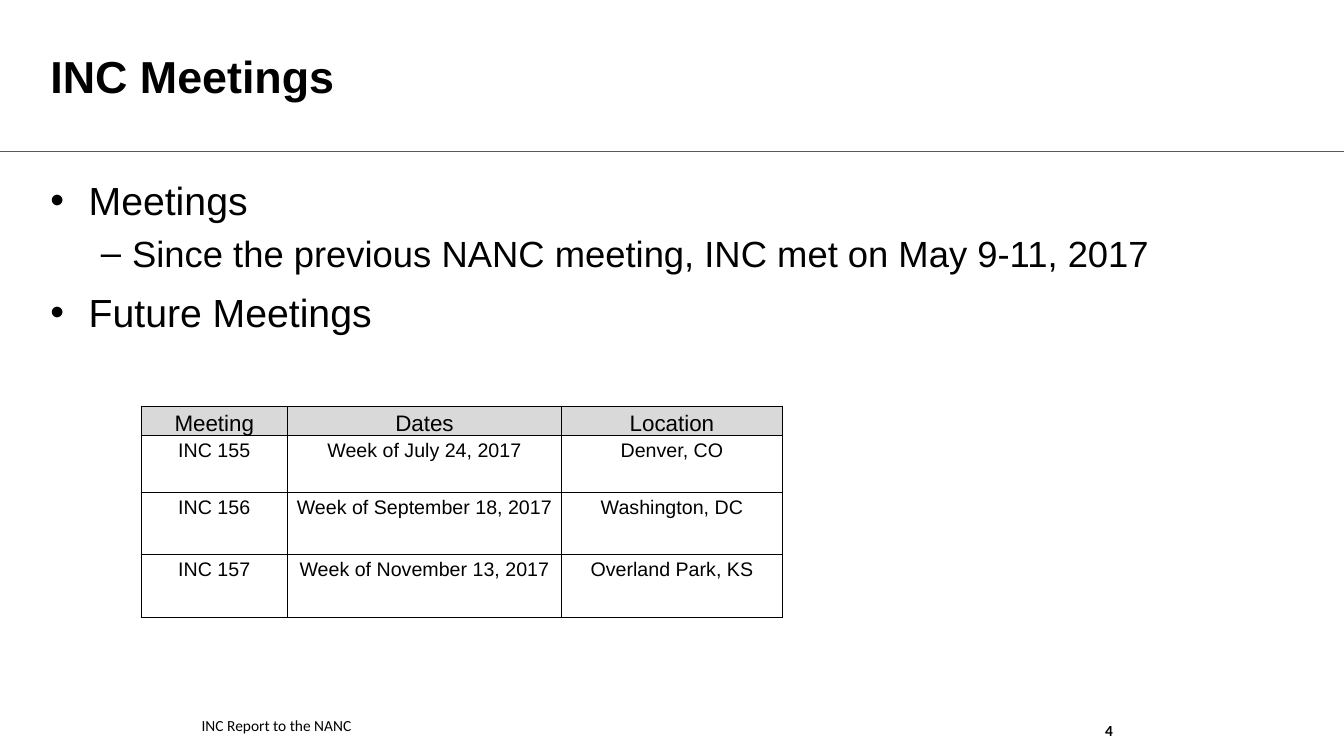
from lxml.etree import SubElement
from pptx import Presentation
from pptx.dml.color import RGBColor
from pptx.enum.shapes import MSO_CONNECTOR
from pptx.enum.text import MSO_ANCHOR, MSO_AUTO_SIZE, PP_ALIGN
from pptx.oxml.ns import qn
from pptx.util import Inches, Pt

BLACK = RGBColor(0x00, 0x00, 0x00)
RULE_GREY = RGBColor(0x59, 0x59, 0x59)
HEADER_GREY = RGBColor(0xD9, 0xD9, 0xD9)

WIDTH, HEIGHT = Inches(13.33), Inches(7.5)
MARGIN = Inches(0.5)
CONTENT_WIDTH = WIDTH - 2 * MARGIN
FOOTER_TOP, FOOTER_HEIGHT = Inches(7.1), Inches(0.3)

# Per level: bullet, left indent, hanging indent (inches), text size, space before
LEVELS = [("•", 0.38, 0.38, 28, 10.3), ("–", 0.81, 0.31, 26, 5.2)]
AGENDA = [
    (0, "Meetings"),
    (1, "Since the previous NANC meeting, INC met on May 9-11, 2017"),
    (0, "Future Meetings"),
]

MEETINGS = [
    ("Meeting", "Dates", "Location"),
    ("INC 155", "Week of July 24, 2017", "Denver, CO"),
    ("INC 156", "Week of September 18, 2017", "Washington, DC"),
    ("INC 157", "Week of November 13, 2017", "Overland Park, KS"),
]
COLUMN_WIDTHS = [1.45, 2.72, 2.19]
ROW_HEIGHTS = [0.29, 0.56, 0.62, 0.62]


def style(p, size, name="Arial", bold=False):
    for r in p.runs:
        r.font.name, r.font.size, r.font.bold = name, Pt(size), bold
        r.font.color.rgb = BLACK


def place(sp, left, top, width, height):
    sp.left, sp.top, sp.width, sp.height = left, top, width, height


def prepare_frame(tf, anchor):
    tf.word_wrap = True
    tf.auto_size = MSO_AUTO_SIZE.NONE
    tf.vertical_anchor = anchor
    tf.margin_left = tf.margin_right = tf.margin_top = tf.margin_bottom = 0


def fill_title(sp, text):
    place(sp, MARGIN, Inches(0.25), CONTENT_WIDTH, Inches(1))
    tf = sp.text_frame
    tf.text = text
    prepare_frame(tf, MSO_ANCHOR.MIDDLE)
    p = tf.paragraphs[0]
    p.alignment = PP_ALIGN.LEFT
    style(p, 32, bold=True)


def fill_body(sp, items):
    place(sp, MARGIN, Inches(1.75), CONTENT_WIDTH, Inches(5))
    tf = sp.text_frame
    tf.text = "\n".join(text for _, text in items)
    prepare_frame(tf, MSO_ANCHOR.TOP)
    for i, (p, (level, _)) in enumerate(zip(tf.paragraphs, items)):
        bullet, left, hanging, size, before = LEVELS[level]
        p.level = level
        p.space_before = Pt(before if i else 0)
        pPr = p._p.get_or_add_pPr()
        pPr.set("marL", str(Inches(left)))
        pPr.set("indent", str(-Inches(hanging)))
        SubElement(pPr, qn("a:buFont"), typeface="Arial")
        SubElement(pPr, qn("a:buChar"), char=bullet)
        style(p, size)


def add_rule(s, top):
    line = s.shapes.add_connector(MSO_CONNECTOR.STRAIGHT, 0, top, WIDTH, top)
    line.line.color.rgb = RULE_GREY
    line.line.width = Pt(0.5)
    SubElement(line._element.spPr, qn("a:effectLst"))


def add_footer(s, text, left, width, anchor, align, bold=False):
    sp = s.shapes.add_textbox(left, FOOTER_TOP, width, FOOTER_HEIGHT)
    tf = sp.text_frame
    tf.text = text
    prepare_frame(tf, anchor)
    p = tf.paragraphs[0]
    p.alignment = align
    style(p, 11, "Calibri", bold)


def add_borders(cell):
    tcPr = cell._tc.get_or_add_tcPr()
    for side in ("lnL", "lnR", "lnT", "lnB"):
        ln = SubElement(tcPr, qn(f"a:{side}"), w=str(Pt(1)))
        fill = SubElement(ln, qn("a:solidFill"))
        SubElement(fill, qn("a:srgbClr"), val=str(BLACK))


def format_cell(cell, text, header):
    cell.text = text
    cell.margin_left = cell.margin_right = cell.margin_top = Inches(0.01)
    cell.margin_bottom = 0
    add_borders(cell)
    if header:
        cell.fill.solid()
        cell.fill.fore_color.rgb = HEADER_GREY
    else:
        cell.fill.background()
    p = cell.text_frame.paragraphs[0]
    p.alignment = PP_ALIGN.CENTER
    p.line_spacing = 1.15
    p.space_after = Pt(10)
    style(p, 16 if header else 14)


def add_meeting_table(s, left, top):
    frame = s.shapes.add_table(
        len(MEETINGS), len(COLUMN_WIDTHS), left, top,
        Inches(sum(COLUMN_WIDTHS)), Inches(sum(ROW_HEIGHTS)))
    table = frame.table
    table.horz_banding = table.first_row = False
    for column, width in zip(table.columns, COLUMN_WIDTHS):
        column.width = Inches(width)
    for i, (row, height) in enumerate(zip(table.rows, ROW_HEIGHTS)):
        row.height = Inches(height)
        for cell, text in zip(row.cells, MEETINGS[i]):
            format_cell(cell, text, header=i == 0)


def main():
    prs = Presentation()
    prs.slide_width, prs.slide_height = WIDTH, HEIGHT
    s = prs.slides.add_slide(prs.slide_layouts[1])
    add_rule(s, HEIGHT // 5)
    add_footer(s, "INC Report to the NANC", Inches(2), Inches(8),
               MSO_ANCHOR.TOP, PP_ALIGN.LEFT)
    fill_title(s.shapes.title, "INC Meetings")
    fill_body(s.placeholders[1], AGENDA)
    add_footer(s, "4", Inches(10.5), Inches(1),
               MSO_ANCHOR.MIDDLE, PP_ALIGN.CENTER, bold=True)
    add_meeting_table(s, Inches(1.4), Inches(4.03))
    prs.save("out.pptx")


if __name__ == "__main__":
    main()
